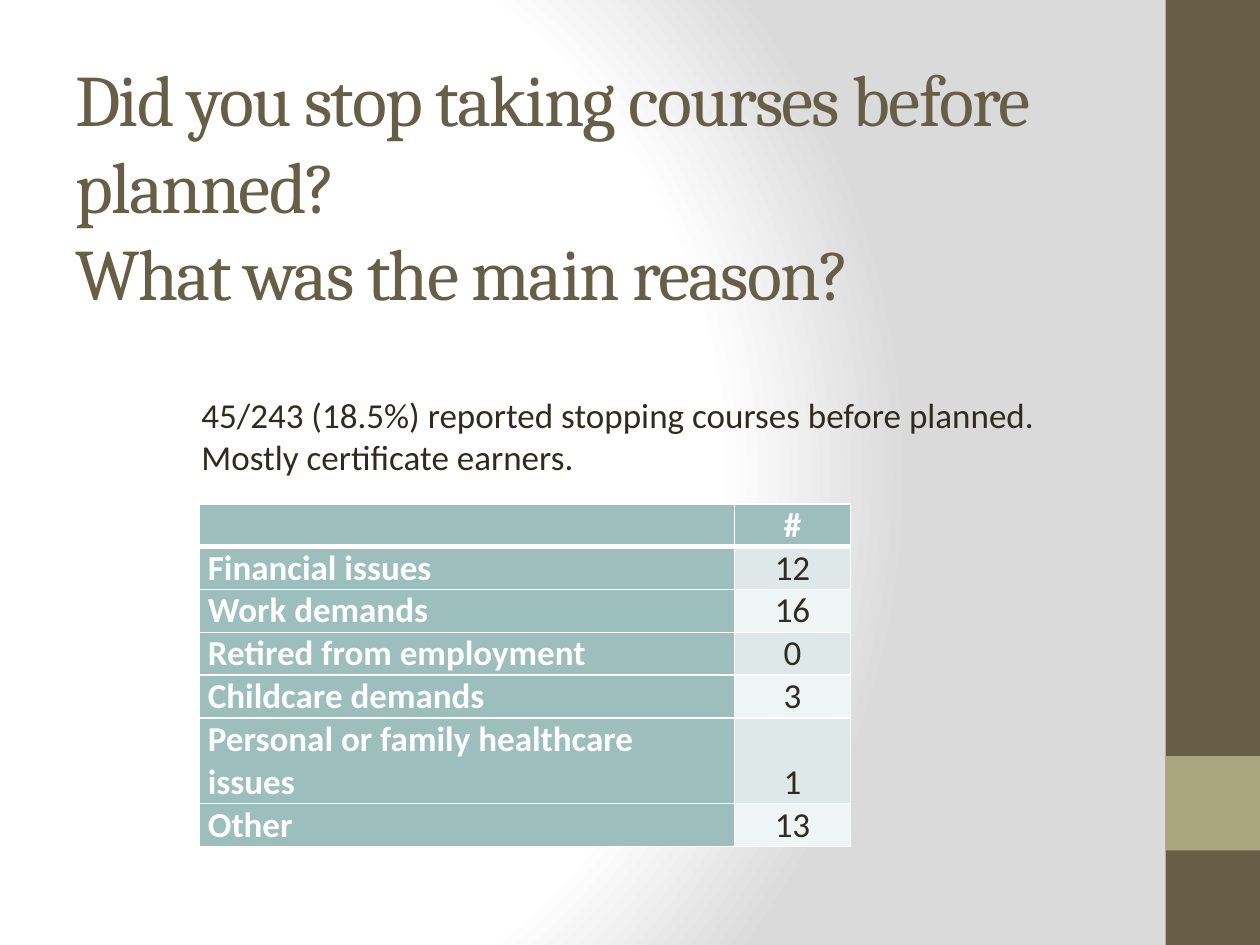
from lxml.etree import SubElement
from pptx import Presentation
from pptx.dml.color import RGBColor
from pptx.enum.shapes import MSO_SHAPE
from pptx.enum.text import MSO_ANCHOR, PP_ALIGN
from pptx.oxml.ns import qn
from pptx.util import Inches, Pt

WIDTH, HEIGHT = Inches(10), Inches(7.5)
WHITE = RGBColor(0xFF, 0xFF, 0xFF)
GREY = RGBColor(0xDA, 0xDA, 0xDA)
BROWN = RGBColor(0x67, 0x5E, 0x47)
OLIVE = RGBColor(0xA9, 0xA5, 0x7C)
INK = RGBColor(0x2F, 0x2B, 0x20)
TEAL = RGBColor(0x9C, 0xBE, 0xBD)
BANDS = RGBColor(0xDE, 0xE8, 0xE8), RGBColor(0xEF, 0xF4, 0xF4)

TITLE = {"name": "Cambria", "size": Pt(41.4), "color": BROWN}
BODY = {"name": "Calibri", "size": Pt(20), "color": INK, "bold": False}
LABEL = {**BODY, "color": WHITE, "bold": True}

REASONS = [
    ("", "#"),
    ("Financial issues", "12"),
    ("Work demands", "16"),
    ("Retired from employment", "0"),
    ("Childcare demands", "3"),
    ("Personal or family healthcare issues", "1"),
    ("Other", "13"),
]
COLUMNS = 4.25, 0.92
ROW = 0.34
TALL_ROW = 5


def share(left, top, width, height):
    return (round(WIDTH * left), round(HEIGHT * top),
            round(WIDTH * width), round(HEIGHT * height))


def format_font(font, values):
    for key, value in values.items():
        if key == "color":
            font.color.rgb = value
        else:
            setattr(font, key, value)


def set_background(page):
    fill = page.background.fill
    fill.gradient()
    gradient = page.element.find(".//" + qn("a:gradFill"))
    for child in list(gradient):
        gradient.remove(child)
    stops = SubElement(gradient, qn("a:gsLst"))
    for position, color in ((0, WHITE), (75, WHITE), (100, GREY)):
        stop = SubElement(stops, qn("a:gs"), pos=str(position * 1000))
        SubElement(stop, qn("a:srgbClr"), val=str(color))
    shade = SubElement(gradient, qn("a:path"), {"path": "circle"})
    SubElement(shade, qn("a:fillToRect"),
               l="20000", t="50000", r="100000", b="50000")


def add_block(page, area, color):
    block = page.shapes.add_shape(MSO_SHAPE.RECTANGLE, *area)
    block.shadow.inherit = False
    block.fill.solid()
    block.fill.fore_color.rgb = color
    block.line.fill.background()


def add_text(page, area, lines, values, wrap=True, anchor=MSO_ANCHOR.TOP):
    box = page.shapes.add_textbox(*area)
    frame = box.text_frame
    frame.word_wrap = wrap
    frame.vertical_anchor = anchor
    frame.text = lines
    spans = [span for para in frame.paragraphs for span in para.runs]
    for span in spans:
        format_font(span.font, values)
    return spans


def set_borders(cell, widths):
    properties = cell._tc.get_or_add_tcPr()
    for side, width in widths.items():
        line = SubElement(properties, qn("a:ln" + side), w=str(Pt(width)))
        fill = SubElement(line, qn("a:solidFill"))
        SubElement(fill, qn("a:srgbClr"), val=str(WHITE))


def fill_cell(cell, text, row, column):
    heading = row == 0 or column == 0
    set_borders(cell, {"L": 1, "R": 1, "T": 3 if row == 1 else 1,
                       "B": 3 if row == 0 else 1})
    cell.fill.solid()
    cell.fill.fore_color.rgb = TEAL if heading else BANDS[(row - 1) % 2]
    margins = {"margin_left": Inches(0.07), "margin_right": Inches(0.07),
               "margin_top": 0, "margin_bottom": 0,
               "vertical_anchor": MSO_ANCHOR.BOTTOM}
    for key, value in margins.items():
        setattr(cell, key, value)
    para = cell.text_frame.paragraphs[0]
    para.alignment = PP_ALIGN.CENTER if column else PP_ALIGN.LEFT
    span = para.add_run()
    span.text = text
    format_font(span.font, LABEL if heading else BODY)


def add_reasons(page):
    heights = [ROW * (2 if row == TALL_ROW else 1) for row in range(len(REASONS))]
    table = page.shapes.add_table(
        len(REASONS), len(COLUMNS), Inches(1.58), Inches(4),
        Inches(sum(COLUMNS)), Inches(sum(heights))).table
    for column, width in zip(table.columns, COLUMNS):
        column.width = Inches(width)
    for row, height in zip(table.rows, heights):
        row.height = Inches(height)
    for row, texts in enumerate(REASONS):
        for column, text in enumerate(texts):
            fill_cell(table.cell(row, column), text, row, column)


def main():
    deck = Presentation()
    deck.slide_width, deck.slide_height = WIDTH, HEIGHT
    page = deck.slides.add_slide(deck.slide_layouts[6])
    set_background(page)
    add_block(page, share(0.925, 0, 0.075, 1), BROWN)
    add_block(page, share(0.925, 0.8, 0.075, 0.1), OLIVE)
    title = add_text(page, share(0.05, 0.11, 0.83, 0.17),
                     "Did you stop taking courses before planned? \vWhat was the main reason?",
                     TITLE, anchor=MSO_ANCHOR.MIDDLE)
    for span in title:
        span.font._element.set("spc", "-100")
    add_reasons(page)
    add_text(page, share(0.15, 0.41, 0.69, 0.1),
             "45/243 (18.5%) reported stopping courses before planned.\n"
             "Mostly certificate earners.", BODY, wrap=False)
    deck.save("out.pptx")


if __name__ == "__main__":
    main()
